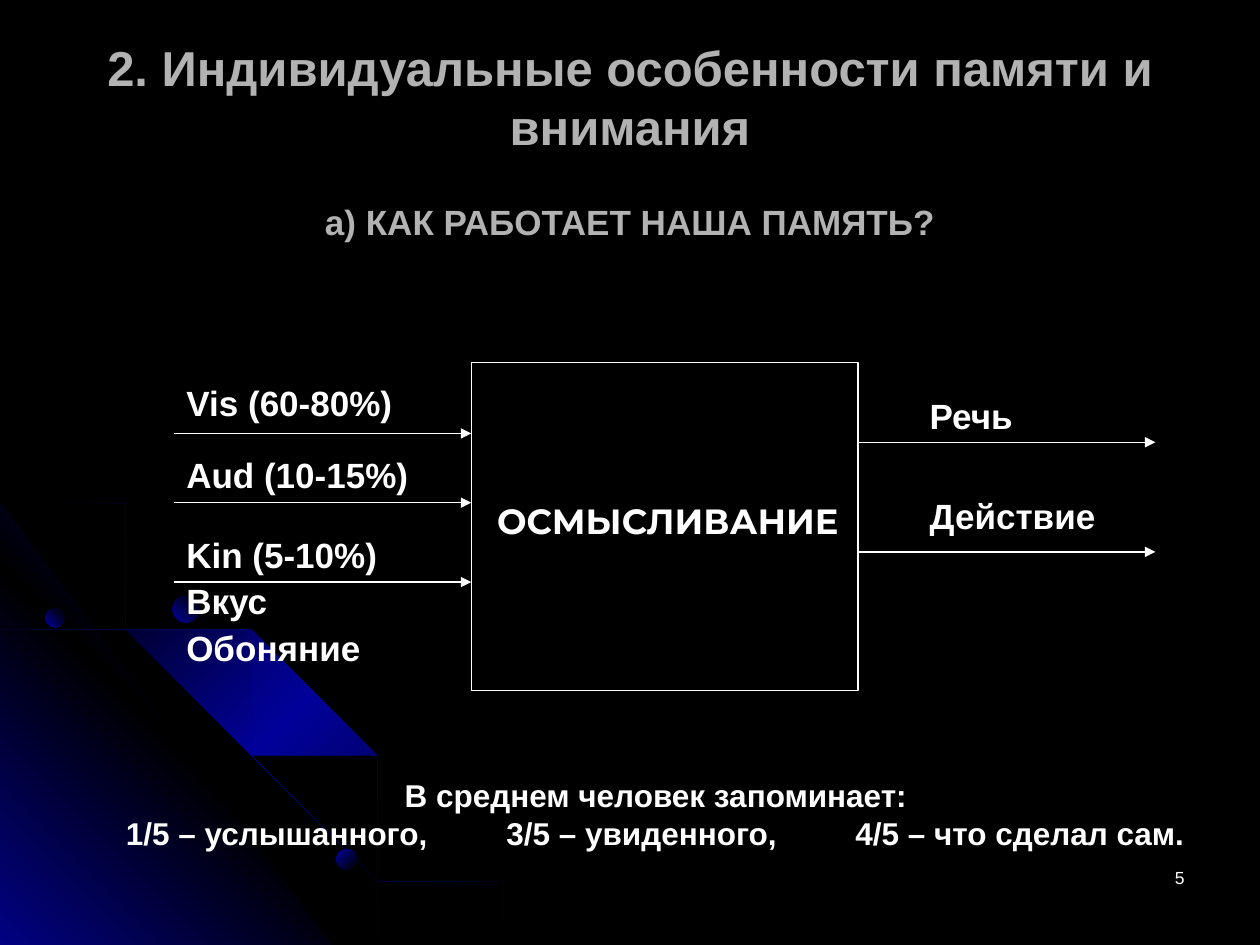
from dataclasses import dataclass

from lxml import etree
from pptx import Presentation
from pptx.dml.color import RGBColor
from pptx.enum.shapes import MSO_CONNECTOR, MSO_SHAPE
from pptx.enum.text import MSO_ANCHOR, MSO_AUTO_SIZE, PP_ALIGN
from pptx.oxml.ns import qn
from pptx.util import Inches, Pt

LEFT, CENTER, RIGHT = PP_ALIGN.LEFT, PP_ALIGN.CENTER, PP_ALIGN.RIGHT
TOP, MIDDLE = MSO_ANCHOR.TOP, MSO_ANCHOR.MIDDLE
RECTANGLE, OVAL = MSO_SHAPE.RECTANGLE, MSO_SHAPE.OVAL
STRAIGHT = MSO_CONNECTOR.STRAIGHT
NO_AUTOFIT = MSO_AUTO_SIZE.NONE

WIDTH, HEIGHT = 10, 7.5

# Columns of the diagram: inputs, processing box, outputs
INPUT_X, BOX_X, OUTPUT_X, END_X = 1.38, 3.74, 6.81, 9.17
LABEL_W = 1.89
OUTPUT_LABEL_X = END_X - LABEL_W
BOX_Y, BOX_H = 2.88, 2.6
INPUT_ROWS = (3.44, 3.99, 4.62)
OUTPUT_ROWS = (3.51, 4.38)


@dataclass(frozen=True)
class Theme:
    background: str = "000000"
    glow: str = "010199"
    text: str = "FFFFFF"
    heading: str = "B2B2B2"
    font: str = "Arial"
    accent_font: str = "Montserrat"
    title: int = 28
    label: int = 20
    summary: int = 18
    number: int = 10
    line: float = 0.75


THEME = Theme()

# Upper edges of the three orbit trails
ORBITS = (
    ((0, 4.35), (0.57, 4.47), (0.98, 4.59), (1.36, 4.77), (1.74, 4.97),
     (2.09, 5.21), (2.42, 5.48), (2.72, 5.78), (3, 6.11), (3.25, 6.48),
     (3.39, 6.73), (3.52, 6.98), (3.62, 7.23), (3.72, 7.49)),
    ((0, 4.75), (0.41, 4.88), (0.79, 5.05), (1.17, 5.26), (1.52, 5.49),
     (1.84, 5.76), (2.15, 6.06), (2.42, 6.4), (2.66, 6.76), (2.86, 7.12),
     (2.96, 7.3), (3.03, 7.49)),
    ((0, 4.42), (0.39, 4.55), (0.76, 4.73), (1.11, 4.93), (1.44, 5.16),
     (1.75, 5.43), (2.04, 5.73), (2.29, 6.03), (2.54, 6.39), (2.69, 6.65),
     (2.82, 6.93), (2.94, 7.2), (3.03, 7.49)),
)
TRAIL = 0.02
# Planets: left, top, diameter, gradient angle
PLANETS = ((0.36, 4.83, 0.15, 315), (2.67, 6.74, 0.16, 45), (1.37, 4.73, 0.21, 315))


def color(value):
    return RGBColor.from_string(value)


def fill_gradient(shape, colors, angle):
    """Evenly spaced gradient stops, without outline or shadow."""
    shape.shadow.inherit = False
    shape.line.fill.background()
    shape.fill.gradient()
    gradient = shape._element.spPr.find(qn("a:gradFill"))
    stops = gradient.find(qn("a:gsLst"))
    for stop in list(stops):
        stops.remove(stop)
    for index, value in enumerate(colors):
        position = round(100000 * index / (len(colors) - 1))
        stop = etree.SubElement(stops, qn("a:gs"), pos=str(position))
        etree.SubElement(stop, qn("a:srgbClr"), val=value)
    gradient.find(qn("a:lin")).set("ang", str(angle * 60000))


def add_outline(slide, points, colors, angle):
    builder = slide.shapes.build_freeform(*points[0], scale=Inches(1))
    builder.add_line_segments(points[1:], close=True)
    fill_gradient(builder.convert_to_shape(), colors, angle)


def add_backdrop(slide):
    dark, glow = THEME.background, THEME.glow
    corner = ((0, 4.27), (3.22, HEIGHT), (0, HEIGHT))
    add_outline(slide, corner, (glow, dark, glow), 315)
    for edge in ORBITS:
        inner = tuple((max(x - TRAIL, 0), min(y + TRAIL, HEIGHT))
                      for x, y in reversed(edge))
        add_outline(slide, edge + inner, (dark, glow, dark), 45)
    for x, y, size, angle in PLANETS:
        planet = slide.shapes.add_shape(OVAL, *map(Inches, (x, y, size, size)))
        fill_gradient(planet, (glow, dark), angle)


def write(frame, text, size=THEME.label, font=THEME.font, ink=THEME.text,
          bold=True, align=LEFT, anchor=TOP, wrap=True, spacing=1.0, gap=0):
    """Write each line of text as a formatted paragraph; gap goes between."""
    frame.auto_size = NO_AUTOFIT
    frame.word_wrap = wrap
    frame.vertical_anchor = anchor
    for index, line in enumerate(text.split("\n")):
        paragraph = frame.add_paragraph() if index else frame.paragraphs[0]
        paragraph.alignment = align
        paragraph.line_spacing = spacing
        paragraph.space_before = Pt(gap if index else 0)
        run = paragraph.add_run()
        run.text = line
        run.font.name, run.font.size, run.font.bold = font, Pt(size), bold
        run.font.color.rgb = color(ink)
    return frame


def add_text(slide, text, x, y, w, h, **style):
    box = slide.shapes.add_textbox(*map(Inches, (x, y, w, h)))
    return write(box.text_frame, text, **style)


def place(shape, x, y, w, h):
    shape.left, shape.top, shape.width, shape.height = map(Inches, (x, y, w, h))
    return shape.text_frame


def add_arrow(slide, start, end, y):
    arrow = slide.shapes.add_connector(STRAIGHT, *map(Inches, (start, y, end, y)))
    arrow.line.color.rgb = color(THEME.text)
    arrow.line.width = Pt(THEME.line)
    etree.SubElement(arrow.line._get_or_add_ln(), qn("a:tailEnd"), type="triangle")
    etree.SubElement(arrow._element.spPr, qn("a:effectLst"))


def add_title(slide):
    frame = place(slide.shapes.title, 0, 0.3, WIDTH, 1.87)
    frame.margin_top = frame.margin_bottom = 0
    write(frame, "2. Индивидуальные особенности памяти и внимания",
          size=THEME.title, ink=THEME.heading, align=CENTER)
    subtitle = frame.add_paragraph()
    subtitle.alignment = CENTER
    subtitle.space_before = Pt(26)
    run = subtitle.add_run()
    run.text = "а) КАК РАБОТАЕТ НАША ПАМЯТЬ?"
    run.font.name, run.font.size, run.font.bold = THEME.font, Pt(THEME.label), True
    run.font.color.rgb = color(THEME.heading)


def add_processing_box(slide):
    box = slide.shapes.add_shape(RECTANGLE, *map(
        Inches, (BOX_X, BOX_Y, OUTPUT_X - BOX_X, BOX_H)))
    box.shadow.inherit = False
    box.fill.solid()
    box.fill.fore_color.rgb = color(THEME.background)
    box.line.color.rgb = color(THEME.text)
    box.line.width = Pt(THEME.line)
    frame = write(box.text_frame, "ОСМЫСЛИВАНИЕ", font=THEME.accent_font,
                  align=CENTER, anchor=MIDDLE, wrap=False)
    frame.margin_left, frame.margin_bottom = Inches(0.15), Inches(0.15)


def add_diagram(slide):
    # Inputs: the strongest channel sits in the body placeholder
    visual = write(place(slide.placeholders[1], INPUT_X, 3.04, LABEL_W, 0.47),
                   "Vis (60-80%)", spacing=0.8, wrap=False)
    properties = visual.paragraphs[0]._p.get_or_add_pPr()
    properties.set("marL", "0")
    properties.set("indent", "0")
    etree.SubElement(properties, qn("a:buNone"))
    add_processing_box(slide)
    for y in INPUT_ROWS:
        add_arrow(slide, INPUT_X, BOX_X, y)
    for y in OUTPUT_ROWS:
        add_arrow(slide, OUTPUT_X, END_X, y)
    # Remaining channels and the outputs
    for text, x, y in (("Aud (10-15%)", INPUT_X, 3.59),
                       ("Kin (5-10%)\nВкус\nОбоняние", INPUT_X, 4.22),
                       ("Речь", OUTPUT_LABEL_X, 3.12),
                       ("Действие", OUTPUT_LABEL_X, 3.91)):
        add_text(slide, text, x, y, LABEL_W, 0.54, spacing=0.9, gap=5, wrap=False)


def add_summary(slide):
    frame = add_text(
        slide, "В среднем человек запоминает:\n"
        "1/5 – услышанного,\t3/5 – увиденного,\t4/5 – что сделал сам.",
        0.9, 6.11, 8.61, 0.7, size=THEME.summary, anchor=MIDDLE)
    heading, shares = frame.paragraphs
    heading.alignment = CENTER
    tabs = etree.SubElement(shares._p.get_or_add_pPr(), qn("a:tabLst"))
    for stop in (3.02, 5.79):
        etree.SubElement(tabs, qn("a:tab"), pos=str(Inches(stop)), algn="l")


def main():
    deck = Presentation()
    deck.slide_width, deck.slide_height = Inches(WIDTH), Inches(HEIGHT)
    slide = deck.slides.add_slide(deck.slide_layouts[1])
    slide.background.fill.solid()
    slide.background.fill.fore_color.rgb = color(THEME.background)
    add_backdrop(slide)
    add_title(slide)
    add_diagram(slide)
    add_summary(slide)
    add_text(slide, "5", 7.17, 6.83, 2.33, 0.5, size=THEME.number,
             bold=False, align=RIGHT)
    deck.save("out.pptx")


if __name__ == "__main__":
    main()
